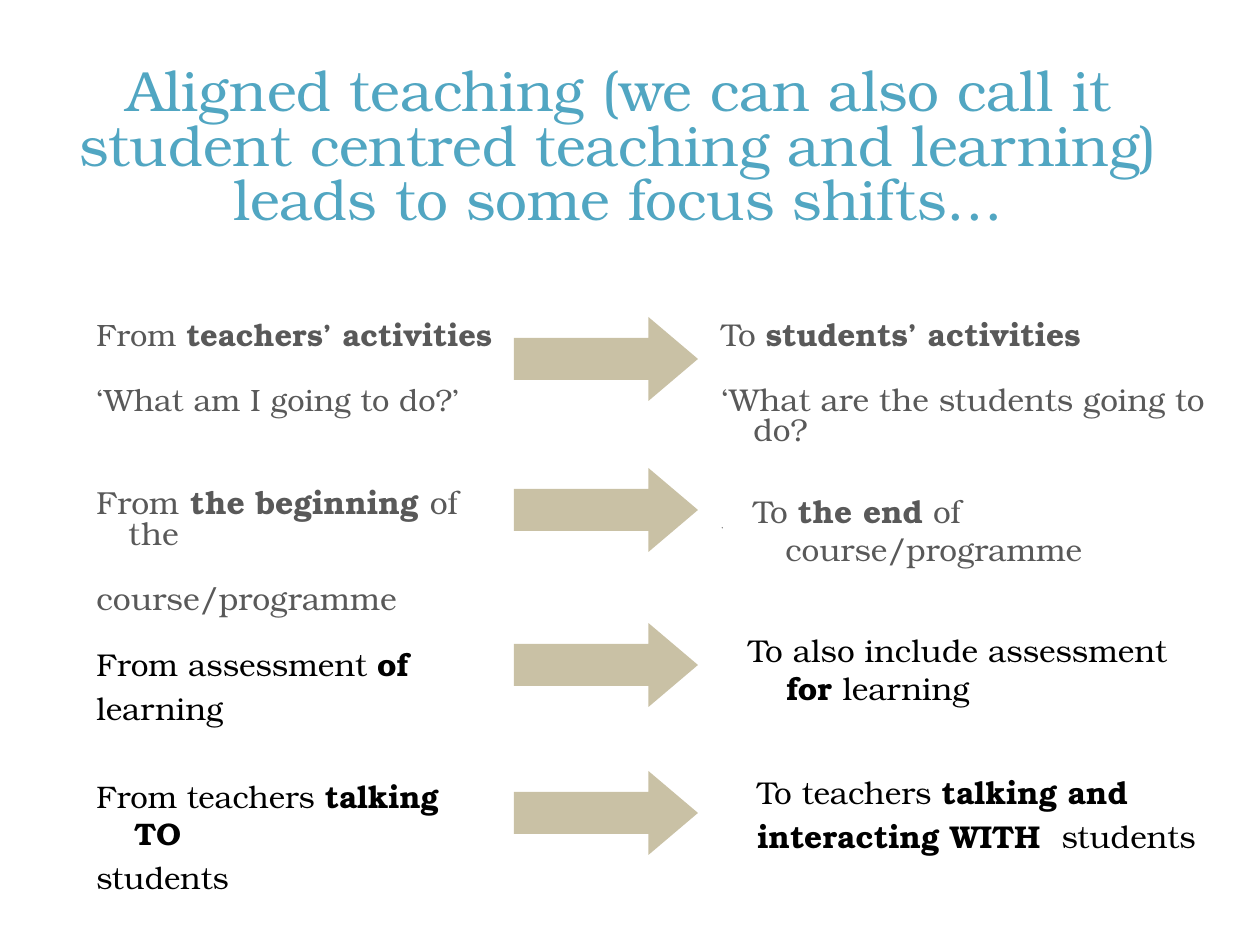
from lxml.etree import SubElement
from pptx import Presentation
from pptx.dml.color import RGBColor
from pptx.enum.shapes import MSO_SHAPE
from pptx.enum.text import MSO_ANCHOR, PP_ALIGN
from pptx.oxml.ns import qn
from pptx.util import Emu, Pt

PX = 914400 // 126
FONT = "TeX Gyre Bonum"
COLORS = {"title": "51A6C2", "grey": "595959", "black": "000000", "arrow": "94844C"}

TITLE = ("Aligned teaching (we can also call it student centred teaching "
         "and learning) leads to some focus shifts…")
TITLE_BOX = (10, 5, 1217, 261)
TITLE_TOP_MARGIN = 63

# Paragraph looks: colour, line spacing, space before (pt), hanging indent (px)
STYLES = {
    "tight": ("grey", 0.8, 20, 32),
    "open": ("grey", 1.0, 20, 32),
    "list": ("black", 1.0, 3.6, 38),
}

# Statements: box (px), style, size (pt), paragraphs; **...** is bold
STATEMENTS = [
    ((84, 317, 430, 115), "tight", 17.6,
     ["From **teachers’ activities**", "‘What am I going to do?’"]),
    ((709, 316, 547, 140), "tight", 18,
     ["To **students’ activities**", "‘What are the students going to do?"]),
    ((84, 484, 420, 122), "tight", 18.2,
     ["From** the beginning **of the", "course/programme"]),
    ((741, 486, 470, 102), "open", 18, ["To **the end** of course/programme"]),
    ((84, 639, 363, 97), "list", 18, ["From assessment **of**", "learning"]),
    ((736, 625, 490, 127), "list", 18, ["To also include assessment **for **learning"]),
    ((84, 771, 408, 97), "list", 17.8, ["From teachers **talking TO**", "students"]),
    ((745, 767, 468, 110), "list", 18,
     ["To teachers **talking and**", "**interacting WITH  **students"]),
]
QUESTION = 1  # statement whose closing quote stands small on its own line
CLOSING_QUOTE, QUOTE_SIZE, QUOTE_SPACE = "’", 5, 45

ARROW_LEFT, ARROW_WIDTH, ARROW_HEIGHT = 514, 184, 84
ARROW_TOPS = [317, 468, 623, 771]


def px(*lengths):
    return [Emu(length * PX) for length in lengths]


def add_text_frame(slide, box):
    frame = slide.shapes.add_textbox(*px(*box)).text_frame
    frame.word_wrap = True
    frame.vertical_anchor = MSO_ANCHOR.TOP
    return frame


def style_font(paragraph, size, color):
    paragraph.font.name = FONT
    paragraph.font.size = Pt(size)
    paragraph.font.color.rgb = RGBColor.from_string(COLORS[color])


def add_paragraph(frame, text, style, size, space=None):
    """Fill the first paragraph or append one, with bold between ** marks."""
    color, line_spacing, space_before, indent = STYLES[style]
    first = frame.paragraphs[0]
    paragraph = frame.add_paragraph() if first.runs else first
    style_font(paragraph, size, color)
    paragraph.line_spacing = line_spacing
    paragraph.space_before = Pt(space or space_before)
    properties = paragraph._p.get_or_add_pPr()
    properties.set("marL", str(indent * PX))
    properties.set("indent", str(-indent * PX))
    for index, part in enumerate(text.split("**")):
        if part:
            run = paragraph.add_run()
            run.text = part
            run.font.bold = index % 2 == 1


def add_title(slide):
    frame = add_text_frame(slide, TITLE_BOX)
    frame.margin_top = Emu(TITLE_TOP_MARGIN * PX)
    heading = frame.paragraphs[0]
    heading.text = TITLE
    heading.alignment = PP_ALIGN.CENTER
    heading.line_spacing = 0.8
    style_font(heading, 32.4, "title")


def add_arrow(slide, top):
    arrow = slide.shapes.add_shape(
        MSO_SHAPE.RIGHT_ARROW, *px(ARROW_LEFT, top, ARROW_WIDTH, ARROW_HEIGHT))
    arrow.adjustments[0] = 0.5
    arrow.adjustments[1] = 0.59
    arrow.shadow.inherit = False
    arrow.line.fill.background()
    arrow.fill.solid()
    arrow.fill.fore_color.rgb = RGBColor.from_string(COLORS["arrow"])
    color = arrow._element.spPr.find(qn("a:solidFill"))[0]
    SubElement(color, qn("a:alpha")).set("val", "50000")


def main():
    deck = Presentation()
    deck.slide_width, deck.slide_height = px(1260, 945)
    slide = deck.slides.add_slide(deck.slide_layouts[6])
    add_title(slide)
    for number, (box, style, size, paragraphs) in enumerate(STATEMENTS):
        frame = add_text_frame(slide, box)
        for text in paragraphs:
            add_paragraph(frame, text, style, size)
        if number == QUESTION:
            add_paragraph(frame, CLOSING_QUOTE, style, QUOTE_SIZE, QUOTE_SPACE)
    for top in ARROW_TOPS:
        add_arrow(slide, top)
    deck.save("out.pptx")


if __name__ == "__main__":
    main()
